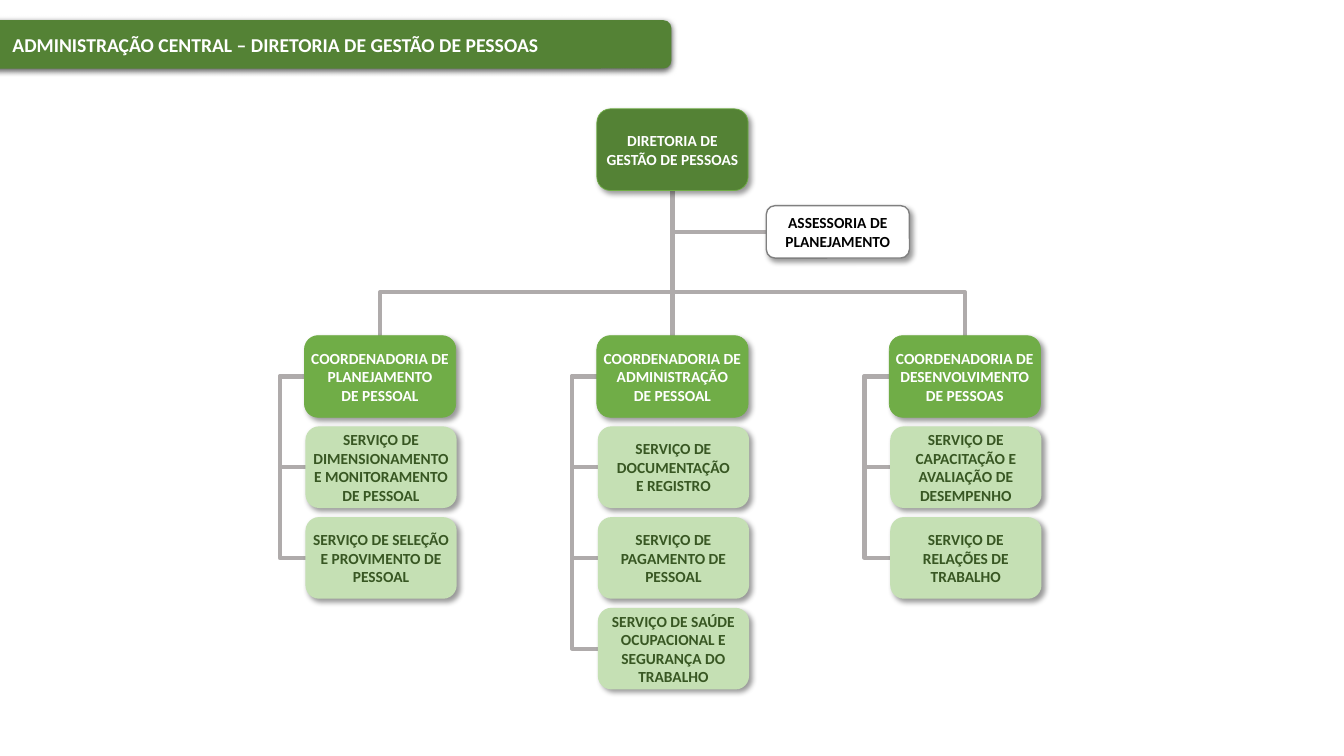
import pptx
import pptx.util
import pptx.dml.color
import pptx.enum.shapes
import pptx.enum.text
import pptx.oxml
import pptx.oxml.ns
from dataclasses import dataclass

SHAPE = pptx.enum.shapes.MSO_SHAPE
CONNECTOR = pptx.enum.shapes.MSO_CONNECTOR
ALIGN = pptx.enum.text.PP_ALIGN
ANCHOR = pptx.enum.text.MSO_ANCHOR
Inches = pptx.util.Inches
Pt = pptx.util.Pt
qn = pptx.oxml.ns.qn


@dataclass(frozen=True)
class Theme:
    font: str = "Calibri"
    title_size: int = 14
    box_size: int = 11
    dark: str = "548235"
    mid: str = "70AD47"
    light: str = "C5E0B4"
    ink: str = "385723"
    white: str = "FFFFFF"
    black: str = "000000"
    border: str = "808080"
    wire: str = "AFABAB"


T = Theme()
SLIDE_W, SLIDE_H = 13.33, 7.5
BOX_W, BOX_H = 1.5, 0.81
COL_X, COL_STEP = 3.02, 2.9
ROW_Y, ROW_STEP = 3.33, 0.9
SERVICE_INDENT = 0.01
BRACKET_REACH = 0.25
BUS_SHARE = 0.7
BOX_SHADOW = (40, 4, 3, 45)
TITLE_SHADOW = (63, 4.5, 1.5, 90)

DEPARTMENTS = [
    (["COORDENADORIA DE", "PLANEJAMENTO", "DE PESSOAL"], [
        ["SERVIÇO DE", "DIMENSIONAMENTO E MONITORAMENTO", "DE PESSOAL"],
        ["SERVIÇO DE SELEÇÃO", "E PROVIMENTO DE", "PESSOAL"]]),
    (["COORDENADORIA DE", "ADMINISTRAÇÃO", "DE PESSOAL"], [
        ["SERVIÇO DE", "DOCUMENTAÇÃO", "E REGISTRO"],
        ["SERVIÇO DE", "PAGAMENTO DE", "PESSOAL"],
        ["SERVIÇO DE SAÚDE", "OCUPACIONAL E", "SEGURANÇA DO", "TRABALHO"]]),
    (["COORDENADORIA DE", "DESENVOLVIMENTO", "DE PESSOAS"], [
        ["SERVIÇO DE", "CAPACITAÇÃO E", "AVALIAÇÃO DE", "DESEMPENHO"],
        ["SERVIÇO DE", "RELAÇÕES DE", "TRABALHO"]]),
]


def rgb(value):
    return pptx.dml.color.RGBColor.from_string(value)


def add_shadow(sp, alpha, blur, dist, angle):
    sp.shadow.inherit = False
    effects = sp.element.spPr.find(qn("a:effectLst"))
    effects.append(pptx.oxml.parse_xml(
        f'<a:outerShdw {pptx.oxml.ns.nsdecls("a")} blurRad="{Pt(blur)}" '
        f'dist="{Pt(dist)}" dir="{angle * 60000}" algn="t" rotWithShape="0">'
        f'<a:srgbClr val="{T.black}"><a:alpha val="{alpha * 1000}"/></a:srgbClr>'
        '</a:outerShdw>'))


def add_box(s, box, lines, fill, color, border=None, border_pt=0.5,
            size=T.box_size, align=ALIGN.CENTER, left_inset=0, shadow=BOX_SHADOW):
    sp = s.shapes.add_shape(SHAPE.ROUNDED_RECTANGLE, *map(Inches, box))
    sp.fill.solid()
    sp.fill.fore_color.rgb = rgb(fill)
    if border:
        sp.line.color.rgb = rgb(border)
        sp.line.width = Pt(border_pt)
    else:
        sp.line.fill.background()
    add_shadow(sp, *shadow)
    tf = sp.text_frame
    tf.word_wrap = True
    tf.vertical_anchor = ANCHOR.MIDDLE
    tf.margin_top = tf.margin_right = tf.margin_bottom = 0
    tf.margin_left = Inches(left_inset)
    tf.text = "\n".join(lines)
    for p in tf.paragraphs:
        p.alignment = align
        p.font.name = T.font
        p.font.size = Pt(size)
        p.font.bold = True
        p.font.color.rgb = rgb(color)
    return sp


def add_wire(s, start, start_side, end, end_side, kind=CONNECTOR.ELBOW):
    c = s.shapes.add_connector(kind, 0, 0, 0, 0)
    c.begin_connect(start, start_side)
    c.end_connect(end, end_side)
    c.line.color.rgb = rgb(T.wire)
    c.line.width = Pt(3)
    c.element.spPr.append(pptx.oxml.parse_xml(
        f'<a:effectLst {pptx.oxml.ns.nsdecls("a")}/>'))
    c.element.getparent().insert(2, c.element)
    return c


def set_bend(c, rotation, flips="", adj=None, preset="bentConnector3"):
    xfrm = c.element.spPr.find(qn("a:xfrm"))
    for name in ("flipH", "flipV"):
        xfrm.attrib.pop(name, None)
        if name[-1] in flips:
            xfrm.set(name, "1")
    xfrm.set("rot", str(rotation * 60000))
    geom = c.element.spPr.find(qn("a:prstGeom"))
    geom.set("prst", preset)
    if adj is not None:
        guides = geom.find(qn("a:avLst"))
        guides.append(pptx.oxml.parse_xml(
            f'<a:gd {pptx.oxml.ns.nsdecls("a")} name="adj1" '
            f'fmla="val {round(adj * 100000)}"/>'))


def turn_down(c, **bend):
    rightward = c.end_x > c.begin_x
    left, top, w, h = c.left, c.top, c.width, c.height
    c.left, c.top = left + (w - h) // 2, top + (h - w) // 2
    c.width, c.height = h, w
    set_bend(c, 270 if rightward else 90, "H" if rightward else "", **bend)


def add_title(s, box):
    add_box(s, box, ["ADMINISTRAÇÃO CENTRAL – DIRETORIA DE GESTÃO DE PESSOAS"],
            T.dark, T.white, size=T.title_size, align=ALIGN.LEFT,
            left_inset=0.34, shadow=TITLE_SHADOW)


def add_department(s, x, y, head_lines, services):
    head = add_box(s, (x, y, BOX_W, BOX_H), head_lines, T.mid, T.white, T.mid)
    for row, lines in enumerate(services, 1):
        service = add_box(
            s, (x + SERVICE_INDENT, y + row * ROW_STEP, BOX_W, BOX_H),
            lines, T.light, T.ink)
        c = add_wire(s, head, 1, service, 1)
        set_bend(c, 180, "HV", -BRACKET_REACH / SERVICE_INDENT)
    return head


def add_chart_tree(s, x, y):
    director = add_box(s, (x + COL_STEP, 1.08, BOX_W, BOX_H),
                       ["DIRETORIA DE GESTÃO DE PESSOAS"], T.dark, T.white, T.mid)
    adviser = add_box(s, (7.6, 2.04, 1.42, 0.52), ["ASSESSORIA DE PLANEJAMENTO"],
                      T.white, T.black, T.border, 1)
    turn_down(add_wire(s, director, 2, adviser, 1), preset="bentConnector2")
    for col, (head_lines, services) in enumerate(DEPARTMENTS):
        head = add_department(s, x + col * COL_STEP, y, head_lines, services)
        if col == 1:
            add_wire(s, director, 2, head, 0, CONNECTOR.STRAIGHT)
        else:
            turn_down(add_wire(s, director, 2, head, 0), adj=BUS_SHARE)


def main():
    prs = pptx.Presentation()
    prs.slide_width = Inches(SLIDE_W)
    prs.slide_height = Inches(SLIDE_H)
    s = prs.slides.add_slide(prs.slide_layouts[6])
    add_chart_tree(s, COL_X, ROW_Y)
    add_title(s, (-0.24, 0.2, 6.9, 0.48))
    prs.save("out.pptx")


if __name__ == "__main__":
    main()
